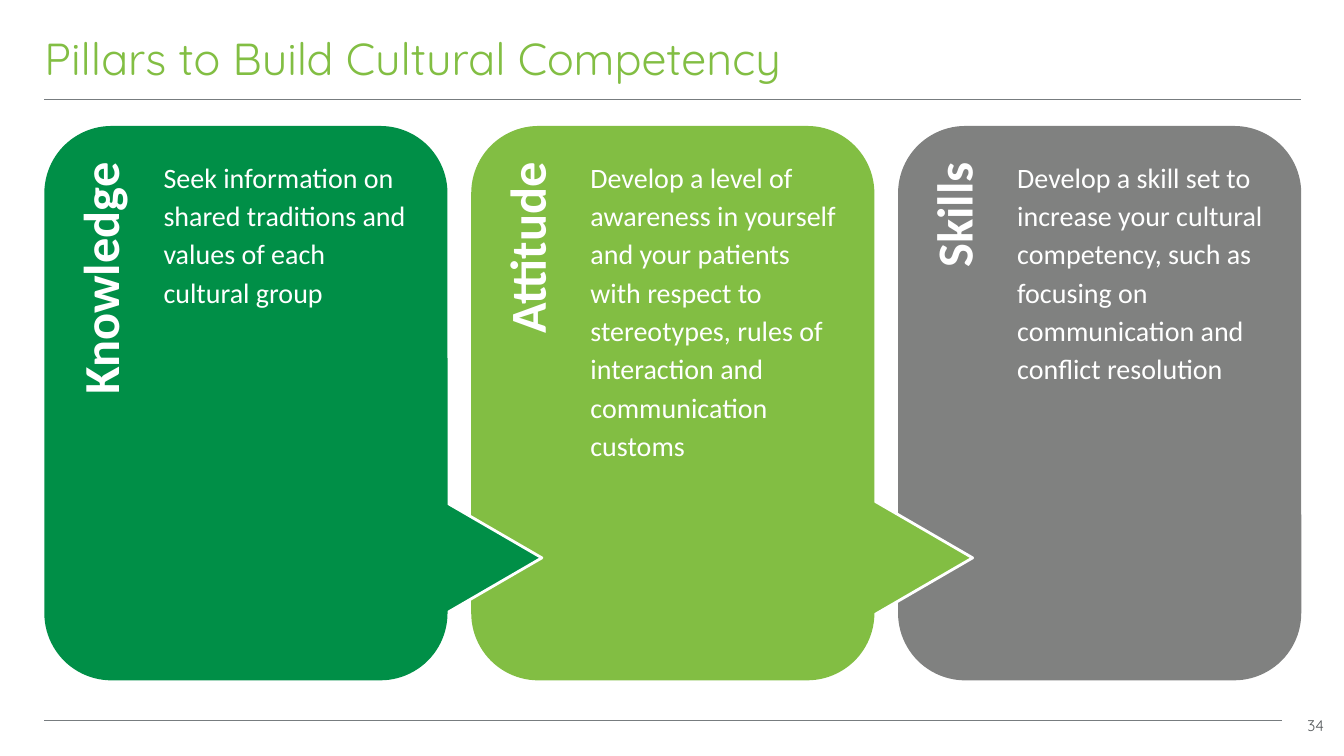
from pptx import Presentation
from pptx.dml.color import RGBColor
from pptx.enum.shapes import MSO_CONNECTOR, MSO_SHAPE
from pptx.enum.text import MSO_ANCHOR, MSO_AUTO_SIZE, PP_ALIGN
from pptx.oxml.ns import qn
from pptx.util import Pt
from lxml.etree import SubElement

PILLARS = [
    ("Knowledge", "008F47", 272.2,
     "Seek information on shared traditions and values of each cultural group"),
    ("Attitude", "82BE43", 275,
     "Develop a level of awareness in yourself and your patients with respect to "
     "stereotypes, rules of interaction and communication customs"),
    ("Skills", "808180", None,
     "Develop a skill set to increase your cultural competency, such as focusing on "
     "communication and conflict resolution"),
]
LEFT, STEP = 31.7, 304.9


def color(code):
    return RGBColor.from_string(code)


def write(frame, text, size=20, face="Calibri", ink="FFFFFF", bold=False,
          align=PP_ALIGN.LEFT, anchor=MSO_ANCHOR.TOP, inset=(0, 0),
          indent=0, lines=1, after=0):
    frame.word_wrap = True
    frame.auto_size = MSO_AUTO_SIZE.NONE
    frame.vertical_anchor = anchor
    frame.margin_left = frame.margin_right = Pt(inset[0])
    frame.margin_top = frame.margin_bottom = Pt(inset[1])
    para = frame.paragraphs[0]
    para.alignment = align
    para.line_spacing = lines
    para.space_after = Pt(after)
    if indent:
        props = para._p.get_or_add_pPr()
        props.set("marL", str(Pt(indent)))
        props.set("indent", "0")
    run = para.add_run()
    run.text = text
    font = run.font
    font.size, font.name, font.bold = Pt(size), face, bold
    font.color.rgb = color(ink)


class Deck:
    """Holds the style and the current slide, and draws each kind of element."""

    head, rule = "Quicksand", "777C7F"

    def __init__(self):
        self.show = Presentation()
        self.show.slide_width, self.show.slide_height = Pt(960), Pt(540)
        self.slide = self.show.slides.add_slide(self.show.slide_layouts[5])
        self.shapes = self.slide.shapes

    def title(self, text, *box):
        shape = self.shapes.title
        shape.left, shape.top, shape.width, shape.height = map(Pt, box)
        write(shape.text_frame, text, size=32, face=self.head, ink="82BE43", after=12)

    def line(self, left, right, top):
        link = self.shapes.add_connector(
            MSO_CONNECTOR.STRAIGHT, Pt(left), Pt(top), Pt(right), Pt(top))
        link.line.color.rgb = color(self.rule)
        link.line.width = Pt(0.5)
        SubElement(link._element.spPr, qn("a:effectLst"))

    def shape(self, kind, fill, *box):
        item = self.shapes.add_shape(kind, *map(Pt, box))
        item.shadow.inherit = False
        item.fill.solid()
        item.fill.fore_color.rgb = color(fill)
        item.line.fill.background()
        return item

    def text(self, text, *box, turn=0, **style):
        item = self.shapes.add_textbox(*map(Pt, box))
        item.rotation = turn
        write(item.text_frame, text, **style)

    def arrow(self, fill, left):
        item = self.shape(MSO_SHAPE.ISOSCELES_TRIANGLE, fill, left, 360, 89.3, 77)
        item.rotation = 90
        item.line.color.rgb = color("FFFFFF")
        item.line.width = Pt(2)

    def pillar(self, left, name, fill, tip, body):
        if tip:
            self.arrow(fill, left + tip)
        card = self.shape(MSO_SHAPE.ROUNDED_RECTANGLE, fill, left, 90, 288, 396)
        write(card.text_frame, body, inset=(7.2, 7.2), indent=64, lines=1.14)
        self.text(name, left - 110.7, 244, 300, 44, turn=270,
                  size=36, bold=True, align=PP_ALIGN.RIGHT)


def main():
    deck = Deck()
    deck.title("Pillars to Build Cultural Competency", LEFT, 21.6, 753, 39)
    deck.line(LEFT, 929.5, 71.3)
    deck.line(LEFT, 915.8, 514.8)
    deck.text("34", 785, 504, 167.8, 28.8, size=11, face=deck.head, ink="54585A",
              align=PP_ALIGN.RIGHT, anchor=MSO_ANCHOR.MIDDLE, inset=(7.2, 3.6))
    for spot, pillar in reversed(list(enumerate(PILLARS))):
        deck.pillar(LEFT + spot * STEP, *pillar)
    deck.show.save("out.pptx")


if __name__ == "__main__":
    main()
